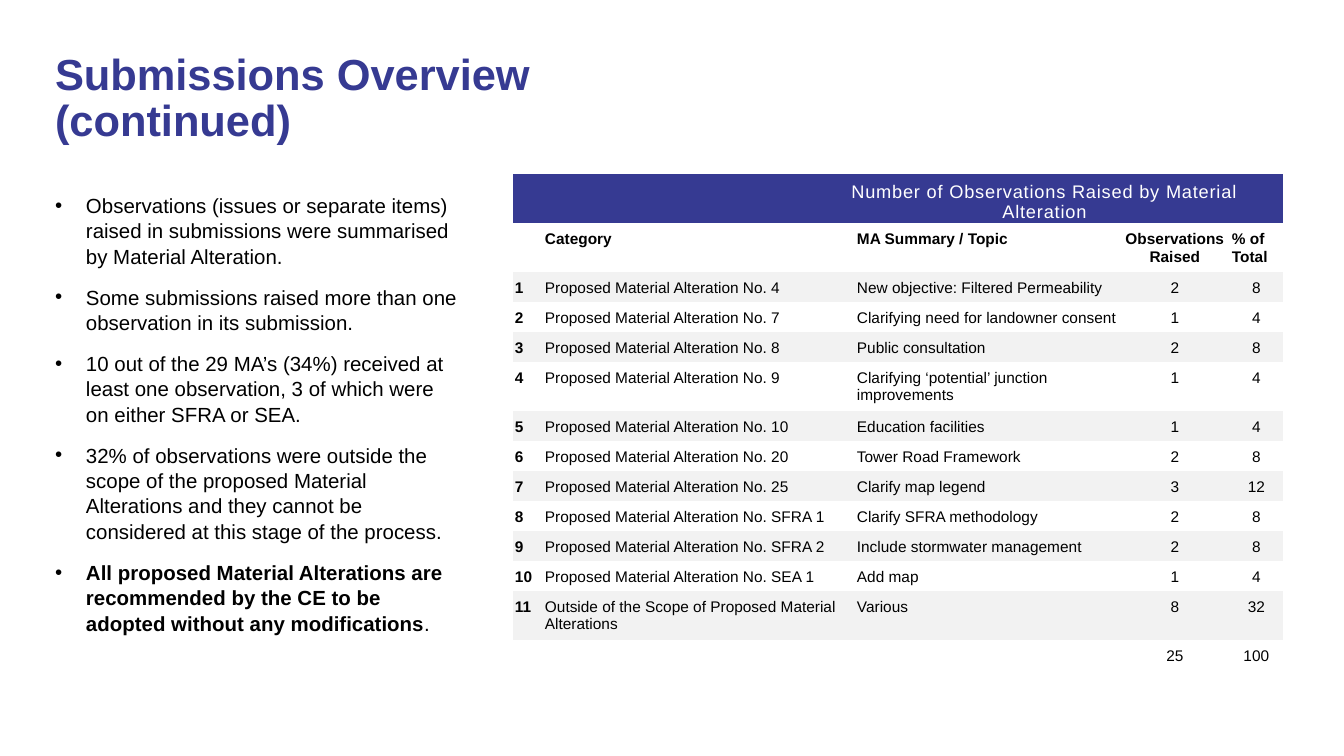
from dataclasses import dataclass

from lxml import etree
from pptx import Presentation
from pptx import util as u
from pptx.dml.color import RGBColor
from pptx.enum import text
from pptx.oxml import ns

EMU_PER_PX = 914400 / 100.8


@dataclass(frozen=True)
class Theme:
    font: str = "Arial"
    indigo: str = "363A92"
    black: str = "000000"
    white: str = "FFFFFF"
    band: str = "F2F2F2"
    title_size: float = 31
    body_size: float = 14.6
    banner_size: float = 13
    cell_size: float = 11


THEME = Theme()
PLAIN_TABLE_STYLE = "{2D5ABB26-0587-4C30-8999-92F81FD0307C}"
LEFT, CENTER = text.PP_ALIGN.LEFT, text.PP_ALIGN.CENTER

BULLETS = [
    [("Observations (issues or separate items) raised in submissions were "
      "summarised by Material Alteration.", False)],
    [("Some submissions raised more than one observation in its submission.", False)],
    [("10 out of the 29 MA’s (34%) received at least one observation, "
      "3 of which were on either SFRA or SEA.", False)],
    [("32% of observations were outside the scope of the proposed Material "
      "Alterations and they cannot be considered at this stage of the process.", False)],
    [("All proposed Material Alterations are recommended by the CE to be "
      "adopted without any modifications", True), (".", False)],
]

BANNER = "Number of Observations Raised by Material Alteration"
HEADINGS = ["", "Category", "MA Summary / Topic", "Observations Raised", "% of Total"]
ALTERATION = "Proposed Material Alteration No. "
OBSERVATIONS = [
    (ALTERATION + "4", "New objective: Filtered Permeability", 2, 8),
    (ALTERATION + "7", "Clarifying need for landowner consent", 1, 4),
    (ALTERATION + "8", "Public consultation", 2, 8),
    (ALTERATION + "9", "Clarifying ‘potential’ junction improvements", 1, 4),
    (ALTERATION + "10", "Education facilities", 1, 4),
    (ALTERATION + "20", "Tower Road Framework", 2, 8),
    (ALTERATION + "25", "Clarify map legend", 3, 12),
    (ALTERATION + "SFRA 1", "Clarify SFRA methodology", 2, 8),
    (ALTERATION + "SFRA 2", "Include stormwater management", 2, 8),
    (ALTERATION + "SEA 1", "Add map", 1, 4),
    ("Outside of the Scope of Proposed Material Alterations", "Various", 8, 32),
]
TOTALS = ["", "", "", 25, 100]

COLUMN_WIDTHS = [30, 263, 49, 265, 110, 53]
FIELD_COLUMNS = [0, 1, 3, 4, 5]
SINGLE_ROW, DOUBLE_ROW = 30, 49
TALL_ROWS = {0, 1, 5, 12}


def px(length):
    return u.Emu(round(length * EMU_PER_PX))


def add_run(paragraph, words, size, color=THEME.black, bold=False):
    run = paragraph.add_run()
    run.text = words
    run.font.name = THEME.font
    run.font.size = u.Pt(size)
    run.font.bold = bold
    run.font.color.rgb = RGBColor.from_string(color)
    return run


def prepare_frame(frame, anchor):
    frame.word_wrap = True
    frame.auto_size = text.MSO_AUTO_SIZE.NONE
    frame.vertical_anchor = anchor
    frame.margin_left = frame.margin_right = 0
    frame.margin_top = frame.margin_bottom = 0


def set_title(slide, words):
    title = slide.shapes.title
    title.left, title.top, title.width, title.height = map(px, (55, 52, 616, 95))
    prepare_frame(title.text_frame, text.MSO_ANCHOR.MIDDLE)
    paragraph = title.text_frame.paragraphs[0]
    paragraph.alignment = LEFT
    paragraph.line_spacing = 0.9
    add_run(paragraph, words, THEME.title_size, THEME.indigo, bold=True)


def add_bullet(paragraph):
    properties = paragraph._p.get_or_add_pPr()
    properties.set("marL", str(px(31)))
    properties.set("indent", str(-px(31)))
    etree.SubElement(properties, ns.qn("a:buFont"), typeface=THEME.font)
    etree.SubElement(properties, ns.qn("a:buChar"), char="•")


def add_bullets(slide, bullets):
    box = slide.shapes.add_textbox(*map(px, (55, 192, 405, 464)))
    frame = box.text_frame
    prepare_frame(frame, text.MSO_ANCHOR.TOP)
    for index, pieces in enumerate(bullets):
        paragraph = frame.add_paragraph() if index else frame.paragraphs[0]
        add_bullet(paragraph)
        paragraph.line_spacing = 1.04
        paragraph.space_after = u.Pt(10.9)
        for words, bold in pieces:
            add_run(paragraph, words, THEME.body_size, bold=bold)


def format_cell(cell, fill):
    cell.margin_left = cell.margin_right = px(2)
    cell.margin_top, cell.margin_bottom = px(8), 0
    if fill:
        cell.fill.solid()
        cell.fill.fore_color.rgb = RGBColor.from_string(fill)
    else:
        cell.fill.background()


def write_cell(cell, words, alignment=LEFT, bold=False):
    paragraph = cell.text_frame.paragraphs[0]
    paragraph.alignment = alignment
    if words:
        add_run(paragraph, words, THEME.cell_size, bold=bold)


def write_banner(table):
    cell = table.cell(0, 2)
    cell.vertical_anchor = text.MSO_ANCHOR.MIDDLE
    paragraph = cell.text_frame.paragraphs[0]
    paragraph.alignment = CENTER
    run = add_run(paragraph, BANNER, THEME.banner_size, THEME.white)
    run.font._element.set("spc", "60")


def row_fill(index, last):
    if index == 0:
        return THEME.indigo
    return THEME.band if index % 2 == 0 and index < last else None


def size_empty_cells(table):
    for cell in table.iter_cells():
        paragraph = cell.text_frame.paragraphs[0]
        if not paragraph.runs:
            size = str(int(THEME.cell_size * 100))
            etree.SubElement(paragraph._p, ns.qn("a:endParaRPr"), sz=size)


def add_observations_table(slide):
    numbered = [(number, *row) for number, row in enumerate(OBSERVATIONS, 1)]
    rows = [HEADINGS, *numbered, TOTALS]
    last = len(rows)
    heights = [DOUBLE_ROW if index in TALL_ROWS else SINGLE_ROW for index in range(last + 1)]
    frame = slide.shapes.add_table(
        last + 1, len(COLUMN_WIDTHS), px(513), px(174),
        px(sum(COLUMN_WIDTHS)), px(sum(heights)))
    table = frame.table
    table.first_row = table.horz_banding = False
    table._tbl.tblPr.find(ns.qn("a:tableStyleId")).text = PLAIN_TABLE_STYLE
    for column, width in zip(table.columns, COLUMN_WIDTHS):
        column.width = px(width)
    for index, height in enumerate(heights):
        table.rows[index].height = px(height)
        for cell in table.rows[index].cells:
            format_cell(cell, row_fill(index, last))

    table.cell(0, 0).merge(table.cell(0, 1))
    table.cell(0, 2).merge(table.cell(0, 5))
    write_banner(table)
    for index, fields in enumerate(rows, 1):
        table.cell(index, 1).merge(table.cell(index, 2))
        for column, words in zip(FIELD_COLUMNS, fields):
            centered = column == 4 or (column == 5 and index > 1)
            write_cell(table.cell(index, column), str(words),
                       CENTER if centered else LEFT, bold=index == 1 or column == 0)
    size_empty_cells(table)


def main():
    presentation = Presentation()
    presentation.slide_width, presentation.slide_height = px(1344), px(756)
    slide = presentation.slides.add_slide(presentation.slide_layouts[5])
    add_bullets(slide, BULLETS)
    set_title(slide, "Submissions Overview (continued)")
    add_observations_table(slide)
    presentation.save("out.pptx")


if __name__ == "__main__":
    main()
